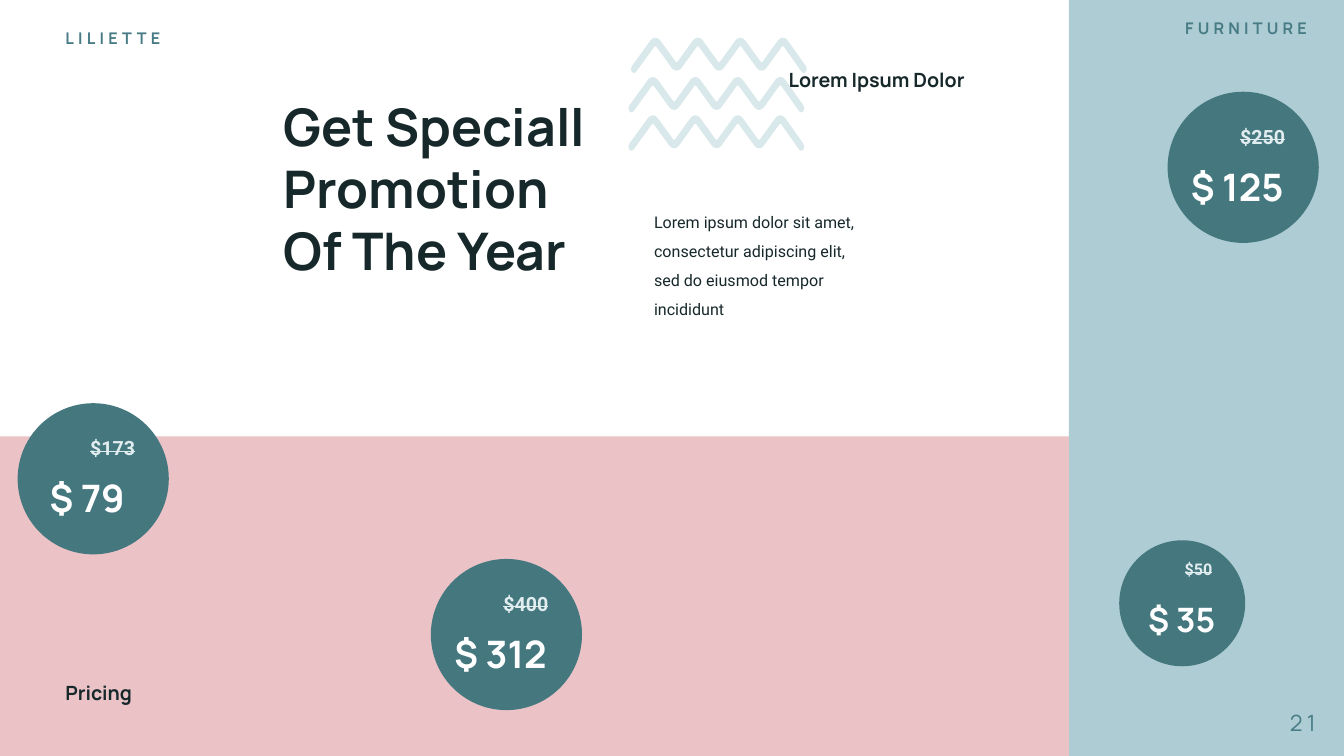
from dataclasses import dataclass

from pptx import Presentation
from pptx.dml.color import RGBColor
from pptx.enum.shapes import MSO_SHAPE
from pptx.enum.text import MSO_ANCHOR, MSO_AUTO_SIZE, PP_ALIGN
from pptx.util import Inches, Pt

COLUMNS, ROWS = 160, 90
CELL = Inches(15) / ROWS


@dataclass(frozen=True)
class Theme:
    """Colours, fonts and type sizes of the slide."""
    white: str = "FFFFFF"
    ink: str = "17282B"
    teal: str = "477B85"
    badge: str = "45777F"
    blue: str = "ADCCD3"
    pink: str = "EBC3C7"
    wave: str = "D9E8EB"
    old_price: str = "E1EDEF"
    heading: str = "Manrope"
    body: str = "Roboto"
    title_size: int = 74
    price_size: int = 54
    small_price_size: int = 48
    number_size: int = 32
    label_size: int = 28
    text_size: int = 23


THEME = Theme()


@dataclass(frozen=True)
class BadgeStyle:
    """Diameter, text boxes within the circle, and type sizes of a badge."""
    diameter: float
    price_box: tuple
    old_box: tuple
    price_size: int
    old_size: int


LARGE = BadgeStyle(18, (1.14, 8.34, 14.28, 5.22), (8.04, 3.6, 6.66, 3.42),
                   THEME.price_size, THEME.label_size)
SMALL = BadgeStyle(15, (0.3, 6.78, 14.28, 5.22), (7.2, 1.98, 4.56, 2.94),
                   THEME.small_price_size, THEME.text_size)


def to_lengths(box):
    """Turn columns and rows into slide lengths."""
    return [round(value * CELL) for value in box]


def paint(shape, color):
    """Give a shape a plain fill without line or shadow."""
    shape.fill.solid()
    shape.fill.fore_color.rgb = RGBColor.from_string(color)
    shape.line.fill.background()
    shape.shadow.inherit = False


def add_block(slide, kind, box, color):
    """Add a plain preset shape."""
    paint(slide.shapes.add_shape(kind, *to_lengths(box)), color)


def write(shape, text, size, color, font=THEME.heading, bold=True, wrap=False,
          align=PP_ALIGN.LEFT, line_spacing=None, spacing=0, strike=False):
    """Fill a text shape and format its runs."""
    frame = shape.text_frame
    frame.text = text
    frame.word_wrap = wrap
    frame.auto_size = MSO_AUTO_SIZE.SHAPE_TO_FIT_TEXT
    frame.vertical_anchor = MSO_ANCHOR.TOP
    for paragraph in frame.paragraphs:
        paragraph.alignment = align
        paragraph.line_spacing = line_spacing
        for run in paragraph.runs:
            run.font.size = Pt(size)
            run.font.name = font
            run.font.bold = bold
            run.font.color.rgb = RGBColor.from_string(color)
            properties = run._r.get_or_add_rPr()
            if spacing:
                properties.set("spc", str(spacing * 100))
            if strike:
                properties.set("strike", "sngStrike")
    return frame


def add_text(slide, box, text, size, color, **options):
    """Add a text box with formatted text."""
    return write(slide.shapes.add_textbox(*to_lengths(box)), text, size, color, **options)


def bend(center, half, level, control, steps):
    """Return points of a symmetric curve that turns around a centre."""
    points = []
    for step in range(steps + 1):
        t = step / steps
        across = (1 - t) ** 3 * -1 + 1.5 * t * (1 - t) * (2 * t - 1) + t ** 3
        lift = 3 * t * (1 - t)
        points.append((center + half * across, level + (control - level) * lift))
    return points


def wave_outline(peaks=4, period=843):
    """Return the outline of a rounded zigzag, 3490 units wide."""
    upper, lower = [(20, 570)], []
    for index in range(peaks):
        center = 485 + period * index
        upper += bend(center, 95, 60, -10, 4)
        lower += bend(center, 15, 180, 170, 1)
        if index < peaks - 1:
            upper += bend(center + period / 2, 15, 490, 500, 1)
            lower += bend(center + period / 2, 95, 610, 680, 4)
    left_end = [(0, 630)] + bend(60, 40, 690, 720, 2)
    right_end = bend(3430, 40, 690, 720, 2) + [(3490, 630), (3470, 570)]
    return upper + (left_end + lower + right_end)[::-1]


def add_wave(slide, box):
    """Add one zigzag line in its box."""
    left, top, width, _ = to_lengths(box)
    start, *rest = wave_outline()
    builder = slide.shapes.build_freeform(*start, scale=width / 3490)
    builder.add_line_segments(rest, close=True)
    paint(builder.convert_to_shape(left, top), THEME.wave)


def add_badge(slide, left, top, style, old_price, price):
    """Add a round price badge with the former price struck out."""
    def inside(box):
        return left + box[0], top + box[1], box[2], box[3]

    add_block(slide, MSO_SHAPE.OVAL, (left, top, style.diameter, style.diameter), THEME.badge)
    frame = add_text(slide, inside(style.price_box), price, style.price_size, THEME.white,
                     wrap=True, align=PP_ALIGN.CENTER)
    frame.auto_size = MSO_AUTO_SIZE.NONE
    frame.margin_left = frame.margin_right = Inches(0.03)
    frame.margin_top = frame.margin_bottom = Inches(0.03)
    add_text(slide, inside(style.old_box), old_price, style.old_size, THEME.old_price,
             font=THEME.body, strike=True)


def add_background(slide, split_column, split_row):
    """Add the colour panels right of and below the white area."""
    add_block(slide, MSO_SHAPE.RECTANGLE,
              (split_column, 0, COLUMNS - split_column, ROWS), THEME.blue)
    add_block(slide, MSO_SHAPE.RECTANGLE,
              (0, split_row, split_column, ROWS - split_row), THEME.pink)


def add_labels(slide):
    """Add the running labels at the slide's edges."""
    add_text(slide, (7.2, 80.74, 9.42, 3.42), "Pricing", THEME.label_size, THEME.ink)
    add_text(slide, (7.2, 3.06, 13.38, 2.94), "LILIETTE", THEME.text_size, THEME.teal, spacing=6)
    add_text(slide, (140.52, 1.86, 16.5, 2.94), "FURNITURE", THEME.text_size, THEME.teal,
             spacing=6)
    add_text(slide, (153, 84.18, 6.54, 3.84), "21", THEME.number_size, THEME.teal,
             bold=False, wrap=True, spacing=6)


def add_message(slide):
    """Place the title, the subheading and the body text."""
    title = slide.shapes.title
    title.left, title.top, title.width, title.height = to_lengths((33.18, 10.98, 38.22, 23.04))
    write(title, "Get Speciall\nPromotion\nOf The Year", THEME.title_size, THEME.ink)
    add_text(slide, (93.3, 7.8, 22.86, 3.42), "Lorem Ipsum Dolor", THEME.label_size, THEME.ink)
    add_text(slide, (77.28, 23.88, 26.46, 14.16),
             "Lorem ipsum dolor sit amet, consectetur adipiscing elit, "
             "sed do eiusmod tempor incididunt",
             THEME.text_size, THEME.ink, font=THEME.body, bold=False, wrap=True,
             line_spacing=1.5)


def build_promotion(presentation):
    """Build the promotion slide."""
    slide = presentation.slides.add_slide(presentation.slide_layouts[5])
    add_background(slide, 127.26, 51.96)
    for left, top in ((74.82, 13.68), (74.82, 9.12), (75.12, 4.44)):
        add_wave(slide, (left, top, 20.94, 4.26))
    add_labels(slide)
    add_message(slide)
    for badge in (
        (2.1, 48, LARGE, "$173", "$ 79"),
        (51.3, 66.54, LARGE, "$400", "$ 312"),
        (139.02, 10.92, LARGE, "$250", "$ 125"),
        (133.26, 64.32, SMALL, "$50", "$ 35"),
    ):
        add_badge(slide, *badge)


def main():
    """Create and save the presentation."""
    presentation = Presentation()
    presentation.slide_width = Inches(26.67)
    presentation.slide_height = Inches(15)
    build_promotion(presentation)
    presentation.save("out.pptx")


if __name__ == "__main__":
    main()
